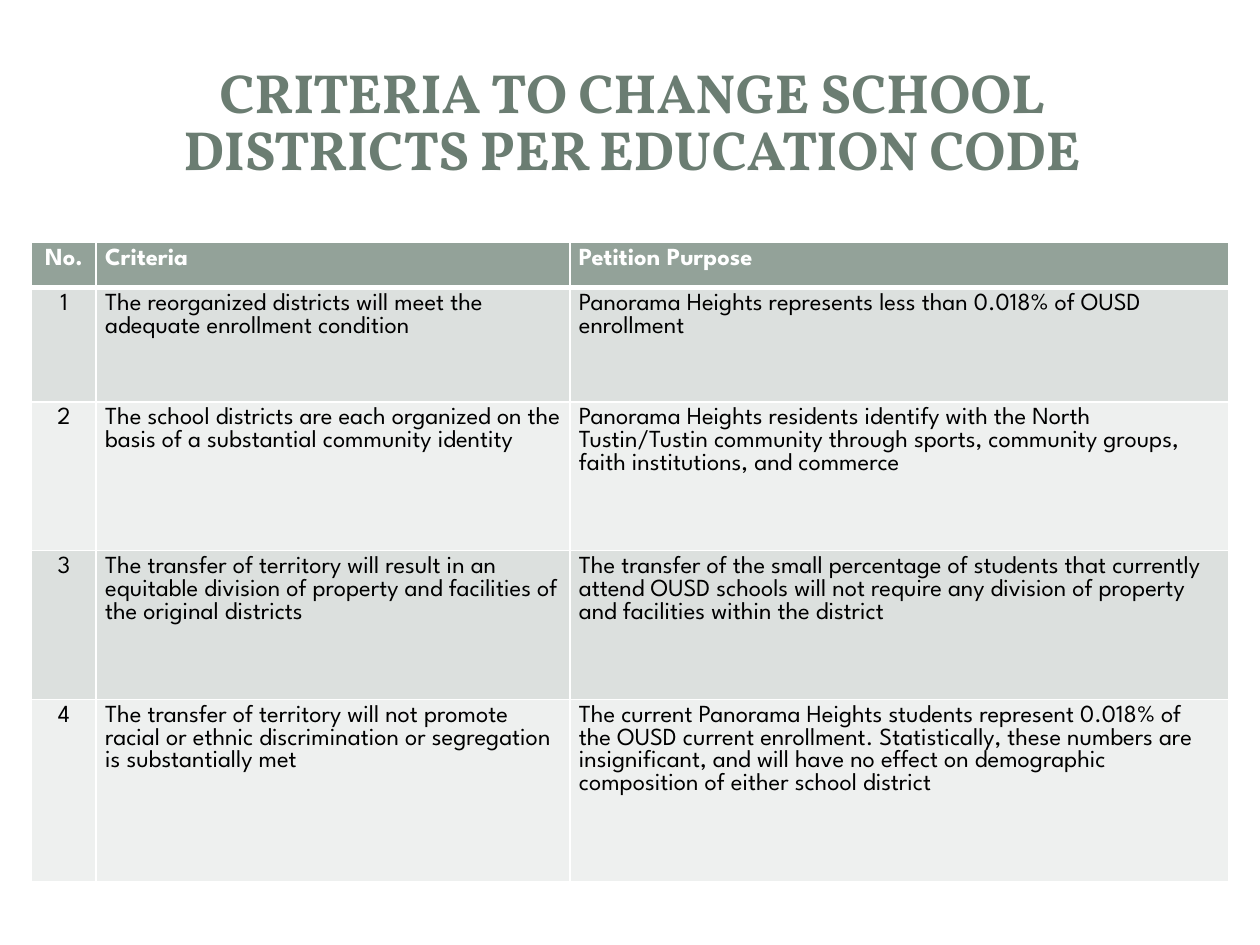
import lxml.etree
import pptx
import pptx.dml.color
import pptx.enum.text
import pptx.oxml.ns
import pptx.util

Cm = pptx.util.Cm
Pt = pptx.util.Pt
CENTER = pptx.enum.text.PP_ALIGN.CENTER
LEFT = pptx.enum.text.PP_ALIGN.LEFT

TITLE = "CRITERIA TO CHANGE SCHOOL DISTRICTS PER EDUCATION CODE"
HEADER = ("No.", "Criteria", "Petition Purpose")
CRITERIA = [
    ("The reorganized districts will meet the adequate enrollment condition",
     "Panorama Heights represents less than 0.018% of OUSD enrollment"),
    ("The school districts are each organized on the basis of a substantial "
     "community identity",
     "Panorama Heights residents identify with the North Tustin/Tustin community "
     "through sports, community groups, faith institutions, and commerce"),
    ("The transfer of territory will result in an equitable division of property "
     "and facilities of the original districts",
     "The transfer of the small percentage of students that currently attend OUSD "
     "schools will not require any division of property and facilities within "
     "the district"),
    ("The transfer of territory will not promote racial or ethnic discrimination "
     "or segregation is substantially met",
     "The current Panorama Heights students represent 0.018% of the OUSD current "
     "enrollment. Statistically, these numbers are insignificant, and will have "
     "no effect on demographic composition of either school district"),
]
COLUMN_WIDTHS = (1.3, 9.55, 13.28)
ROW_HEIGHTS = (0.91, 2.31, 3, 3, 3.68)
HEADER_FILL = "93A299"
BAND_FILLS = ("DCE0DE", "EEF0EF")


def rgb(hex_color):
    return pptx.dml.color.RGBColor.from_string(hex_color)


def write(text_frame, text, font_name, size, color, bold, align):
    text_frame.text = text
    paragraph = text_frame.paragraphs[0]
    paragraph.alignment = align
    font = paragraph.runs[0].font
    font.name = font_name
    font.size = Pt(size)
    font.bold = bold
    font.color.rgb = rgb(color)
    return paragraph


def add_title(slide, left, top, width, height):
    title = slide.shapes.add_textbox(Cm(left), Cm(top), Cm(width), Cm(height))
    frame = title.text_frame
    frame.word_wrap = True
    frame.vertical_anchor = pptx.enum.text.MSO_ANCHOR.MIDDLE
    paragraph = write(frame, TITLE, "Vollkorn", 31.5, "6B7D72", True, CENTER)
    paragraph.line_spacing = 0.86


def set_borders(cell, color, widths):
    """Draw the cell's borders; widths maps a side (L, R, T, B) to points."""
    properties = cell._tc.get_or_add_tcPr()
    qn = pptx.oxml.ns.qn
    for side, width in widths.items():
        line = lxml.etree.SubElement(properties, qn(f"a:ln{side}"), w=str(Pt(width)))
        fill = lxml.etree.SubElement(line, qn("a:solidFill"))
        lxml.etree.SubElement(fill, qn("a:srgbClr"), val=color)


def format_cell(cell, text, row, column):
    is_header = row == 0
    set_borders(cell, "FFFFFF", {"L": 1, "R": 1,
                                 "T": 3 if row == 1 else 1,
                                 "B": 3 if is_header else 1})
    cell.fill.solid()
    cell.fill.fore_color.rgb = rgb(HEADER_FILL if is_header else BAND_FILLS[(row - 1) % 2])
    cell.margin_left = cell.margin_right = Cm(0.18)
    cell.margin_top = cell.margin_bottom = Cm(0.12)
    write(cell.text_frame, text, "League Spartan", 14,
          "FFFFFF" if is_header else "000000", is_header,
          CENTER if column == 0 else LEFT)


def add_criteria_table(slide, left, top):
    rows = [HEADER] + [(str(number), *texts) for number, texts in enumerate(CRITERIA, 1)]
    table = slide.shapes.add_table(
        len(rows), len(HEADER), Cm(left), Cm(top),
        Cm(sum(COLUMN_WIDTHS)), Cm(sum(ROW_HEIGHTS))).table
    for column, width in zip(table.columns, COLUMN_WIDTHS):
        column.width = Cm(width)
    for row, height in zip(table.rows, ROW_HEIGHTS):
        row.height = Cm(height)
    for row, texts in enumerate(rows):
        for column, text in enumerate(texts):
            format_cell(table.cell(row, column), text, row, column)


def main():
    presentation = pptx.Presentation()
    presentation.slide_width = Cm(25.4)
    presentation.slide_height = Cm(19.05)
    slide = presentation.slides.add_slide(presentation.slide_layouts[6])
    add_title(slide, 1.27, 1.07, 22.94, 2.9)
    add_criteria_table(slide, 0.64, 4.88)
    presentation.save("out.pptx")


if __name__ == "__main__":
    main()
